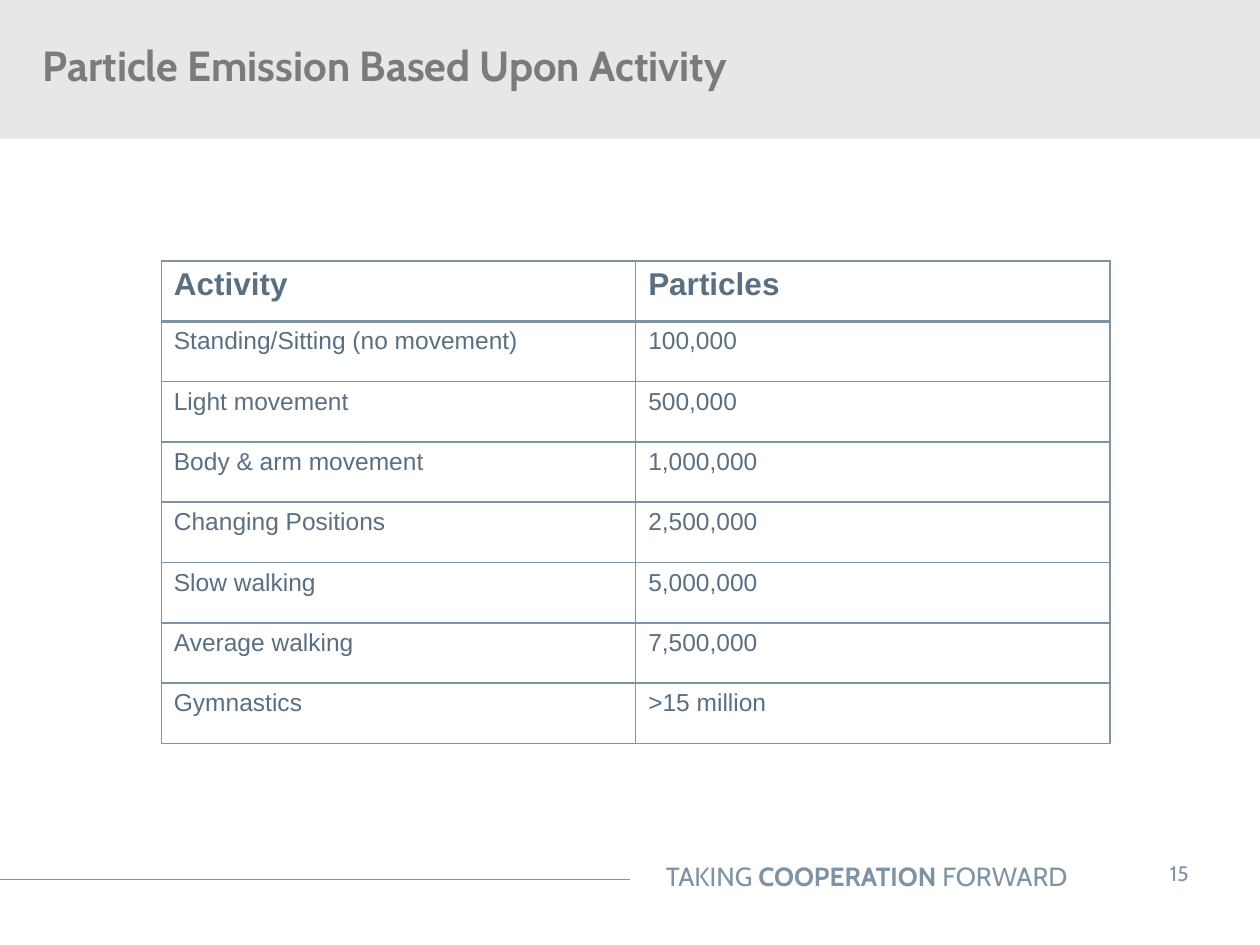
from lxml import etree
from pptx import Presentation
from pptx.dml.color import RGBColor
from pptx.enum.shapes import MSO_CONNECTOR, MSO_SHAPE
from pptx.enum.text import MSO_ANCHOR, MSO_AUTO_SIZE, PP_ALIGN
from pptx.oxml import parse_xml
from pptx.oxml.ns import nsdecls, qn
from pptx.util import Inches, Pt

BAND_GRAY = RGBColor(0xE7, 0xE7, 0xE7)
TITLE_GRAY = RGBColor(0x7B, 0x7B, 0x7B)
STEEL = RGBColor(0x7E, 0x93, 0xA5)
SLATE = RGBColor(0x5A, 0x6F, 0x81)

ROWS = [
    ("Activity", "Particles"),
    ("Standing/Sitting (no movement)", "100,000"),
    ("Light movement", "500,000"),
    ("Body & arm movement", "1,000,000"),
    ("Changing Positions", "2,500,000"),
    ("Slow walking", "5,000,000"),
    ("Average walking", "7,500,000"),
    ("Gymnastics", ">15 million"),
]


def add_run(paragraph, text, size, font_name, color, bold=False):
    run = paragraph.add_run()
    run.text = text
    run.font.size = Pt(size)
    run.font.name = font_name
    run.font.bold = bold
    run.font.color.rgb = color


def add_border(cell, side, width):
    cell._tc.get_or_add_tcPr().append(parse_xml(
        f'<a:ln{side} {nsdecls("a")} w="{Pt(width)}"><a:solidFill>'
        f'<a:srgbClr val="{STEEL}"/></a:solidFill></a:ln{side}>'
    ))


presentation = Presentation()
presentation.slide_width = Inches(10)
presentation.slide_height = Inches(7.5)
slide = presentation.slides.add_slide(presentation.slide_layouts[5])
shapes = slide.shapes

footer_line = shapes.add_connector(
    MSO_CONNECTOR.STRAIGHT, Inches(0), Inches(6.98), Inches(5), Inches(6.98)
)
footer_line.line.color.rgb = STEEL
footer_line.line.width = Pt(0.75)
etree.SubElement(footer_line.element.spPr, qn("a:effectLst"))

title_band = shapes.add_shape(MSO_SHAPE.RECTANGLE, 0, 0, Inches(10), Inches(1.1))
title_band.shadow.inherit = False
title_band.fill.solid()
title_band.fill.fore_color.rgb = BAND_GRAY
title_band.line.fill.background()

slogan = shapes.add_textbox(Inches(3.88), Inches(6.78), Inches(4.69), Inches(0.35))
slogan.text_frame.word_wrap = True
paragraph = slogan.text_frame.paragraphs[0]
paragraph.alignment = PP_ALIGN.RIGHT
for text, bold in (("TAKING ", False), ("COOPERATION", True), (" FORWARD", False)):
    add_run(paragraph, text, 15, "Cabin", STEEL, bold)

page_number = shapes.add_textbox(Inches(8.99), Inches(6.73), Inches(0.74), Inches(0.4))
frame = page_number.text_frame
frame.word_wrap = True
frame.margin_left = frame.margin_right = Inches(0.2)
frame.margin_top = frame.margin_bottom = Inches(0.1)
paragraph = frame.paragraphs[0]
paragraph.alignment = PP_ALIGN.CENTER
add_run(paragraph, "15", 12, "Cabin", STEEL)

title = shapes.title
shapes.element.append(title.element)
title.left, title.top = Inches(0), Inches(0)
title.width, title.height = Inches(7.6), Inches(1.07)
frame = title.text_frame
frame.word_wrap = True
frame.auto_size = MSO_AUTO_SIZE.NONE
frame.vertical_anchor = MSO_ANCHOR.MIDDLE
frame.margin_left = frame.margin_right = Inches(0.1)
frame.margin_top = frame.margin_bottom = Inches(0.1)
paragraph = frame.paragraphs[0]
paragraph.alignment = PP_ALIGN.LEFT
paragraph.line_spacing = 0.9
paragraph._p.get_or_add_pPr().set("marL", str(Inches(0.24)))
add_run(paragraph, "Particle Emission Based Upon Activity", 24, "Cabin", TITLE_GRAY, True)

table = shapes.add_table(
    len(ROWS), 2, Inches(1.28), Inches(2.07), Inches(7.53), Inches(3.83)
).table
table.horz_banding = False
for row_index, values in enumerate(ROWS):
    is_header = row_index == 0
    for column_index, value in enumerate(values):
        cell = table.cell(row_index, column_index)
        add_border(cell, "L", 1)
        add_border(cell, "R", 1)
        add_border(cell, "T", 2 if row_index == 1 else 1)
        add_border(cell, "B", 2 if is_header else 1)
        cell.fill.background()
        add_run(cell.text_frame.paragraphs[0], value,
                18 if is_header else 14, "Arial", SLATE, is_header)

presentation.save("out.pptx")
